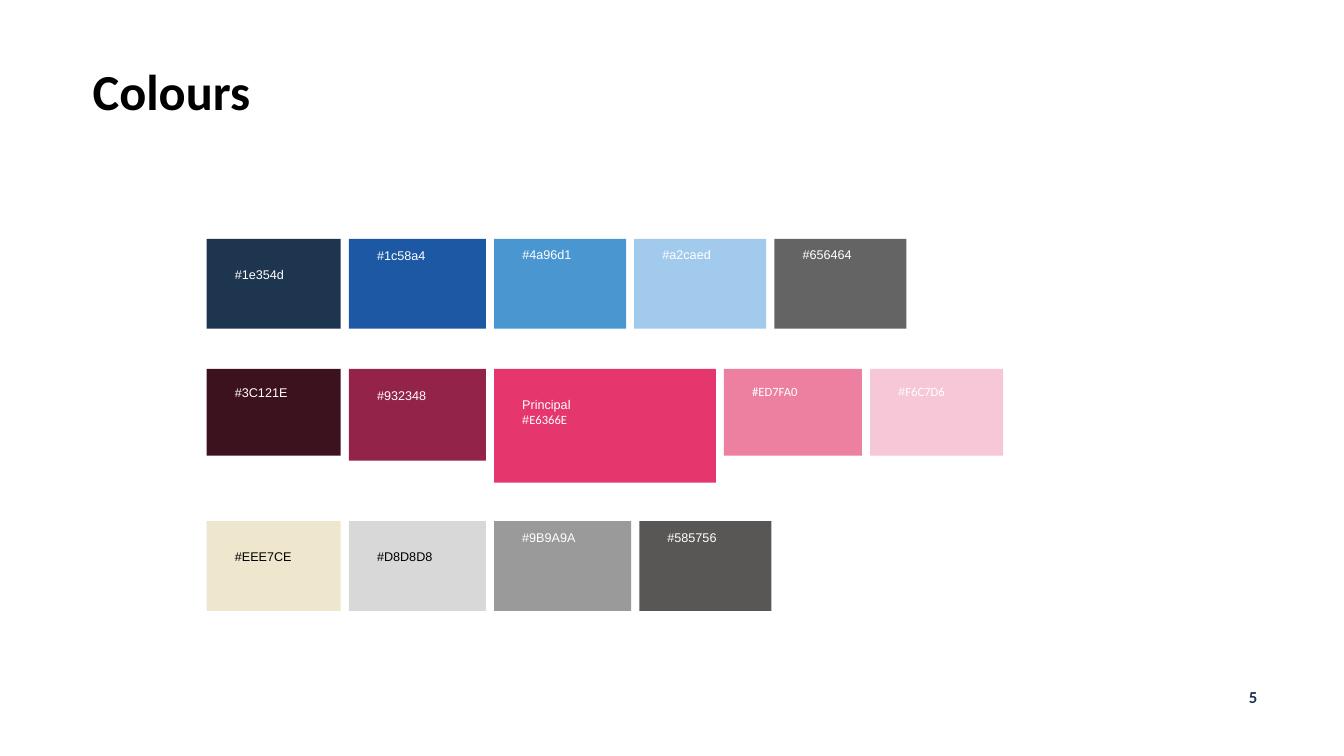
from dataclasses import dataclass

from pptx import Presentation, util as u
from pptx.dml.color import RGBColor
from pptx.enum import shapes, text

EMU_PER_PX = 9144  # 100 px to the inch
GAP = 8
ROW_LEFT = 205
SIDE_INSET = 28

COLOURS = {
    "white": "FFFFFF", "black": "000000", "page number": "1D344D",
    "navy": "1D354E", "blue": "1C58A4", "sky": "4A96D1",
    "pale blue": "A2CAED", "slate": "656464",
    "wine": "3C121E", "berry": "932348", "principal": "E6366E",
    "pink": "ED7FA0", "pale pink": "F6C7D6",
    "cream": "EEE7CE", "light grey": "D8D8D8",
    "grey": "9B9A9A", "dark grey": "585756",
}


@dataclass
class Span:
    words: str
    font: str = "Arial"


@dataclass
class Swatch:
    colour: str
    lines: list[list[Span]]
    width: int
    height: int
    text_top: int = SIDE_INSET
    ink: str = "white"


@dataclass
class Row:
    top: int
    swatches: list[Swatch]


ROWS = [
    Row(237, [
        Swatch("navy", [[Span("#1e354d")]], 133, 89),
        Swatch("blue", [[Span("#1c58a4")]], 136, 89, 9),
        Swatch("sky", [[Span("#4a96d1")]], 131, 89, 8),
        Swatch("pale blue", [[Span("#a2caed")]], 131, 89, 8),
        Swatch("slate", [[Span("#656464")]], 131, 89, 8),
    ]),
    Row(366, [
        Swatch("wine", [[Span("#3C121E")]], 133, 86, 16),
        Swatch("berry", [[Span("#932348")]], 136, 91, 19),
        Swatch("principal", [[Span("Principal")],
                             [Span("#"), Span("E6366E", "Calibri")]], 220, 113),
        Swatch("pink", [[Span("#ED7FA0", "Calibri")]], 137, 86, 15),
        Swatch("pale pink", [[Span("#"), Span("F6C7D6", "Calibri")]], 132, 86, 15),
    ]),
    Row(517, [
        Swatch("cream", [[Span("#EEE7CE")]], 133, 89, ink="black"),
        Swatch("light grey", [[Span("#D8D8D8")]], 136, 89, ink="black"),
        Swatch("grey", [[Span("#9B9A9A")]], 136, 89, 9),
        Swatch("dark grey", [[Span("#585756")]], 131, 89, 9),
    ]),
]


def px(length: int) -> u.Emu:
    return u.Emu(length * EMU_PER_PX)


def set_all(target, values: dict) -> None:
    for name, value in values.items():
        setattr(target, name, value)


def add_span(para, span: Span, size: int, ink: str, bold: bool = False) -> None:
    run = para.add_run()
    run.text = span.words
    set_all(run.font, {"name": span.font, "size": u.Pt(size), "bold": bold})
    run.font.color.rgb = RGBColor.from_string(COLOURS[ink])


def add_heading(page, words: str, place: tuple[int, int, int, int], size: int,
                ink: str, format_values: dict) -> None:
    """Add a bold one-line text box."""
    box = page.shapes.add_textbox(*map(px, place))
    box.text_frame.word_wrap = True
    para = box.text_frame.paragraphs[0]
    set_all(para, format_values)
    add_span(para, Span(words, "Calibri"), size, ink, bold=True)


def add_swatch(page, swatch: Swatch, left: int, top: int) -> None:
    box = page.shapes.add_shape(shapes.MSO_SHAPE.RECTANGLE, px(left), px(top),
                                px(swatch.width), px(swatch.height))
    box.shadow.inherit = False
    box.fill.solid()
    box.fill.fore_color.rgb = RGBColor.from_string(COLOURS[swatch.colour])
    box.line.fill.background()
    frame = box.text_frame
    set_all(frame, {
        "margin_left": px(SIDE_INSET), "margin_right": px(SIDE_INSET),
        "margin_top": px(swatch.text_top), "margin_bottom": 0,
        "vertical_anchor": text.MSO_ANCHOR.TOP, "word_wrap": True,
    })
    for index, line in enumerate(swatch.lines):
        para = frame.add_paragraph() if index else frame.paragraphs[0]
        para.alignment = text.PP_ALIGN.LEFT
        for span in line:
            add_span(para, span, 9, swatch.ink)


def main() -> None:
    deck = Presentation()
    set_all(deck, {"slide_width": px(1333), "slide_height": px(750)})
    page = deck.slides.add_slide(deck.slide_layouts[6])
    add_heading(page, "Colours", (82, 62, 791, 65), 36, "black",
                {"line_spacing": 0.9})
    for row in ROWS:
        left = ROW_LEFT
        for swatch in row.swatches:
            add_swatch(page, swatch, left, row.top)
            left += swatch.width + GAP
    add_heading(page, "5", (1193, 676, 100, 30), 12, "page number",
                {"alignment": text.PP_ALIGN.CENTER})
    deck.save("out.pptx")


if __name__ == "__main__":
    main()
